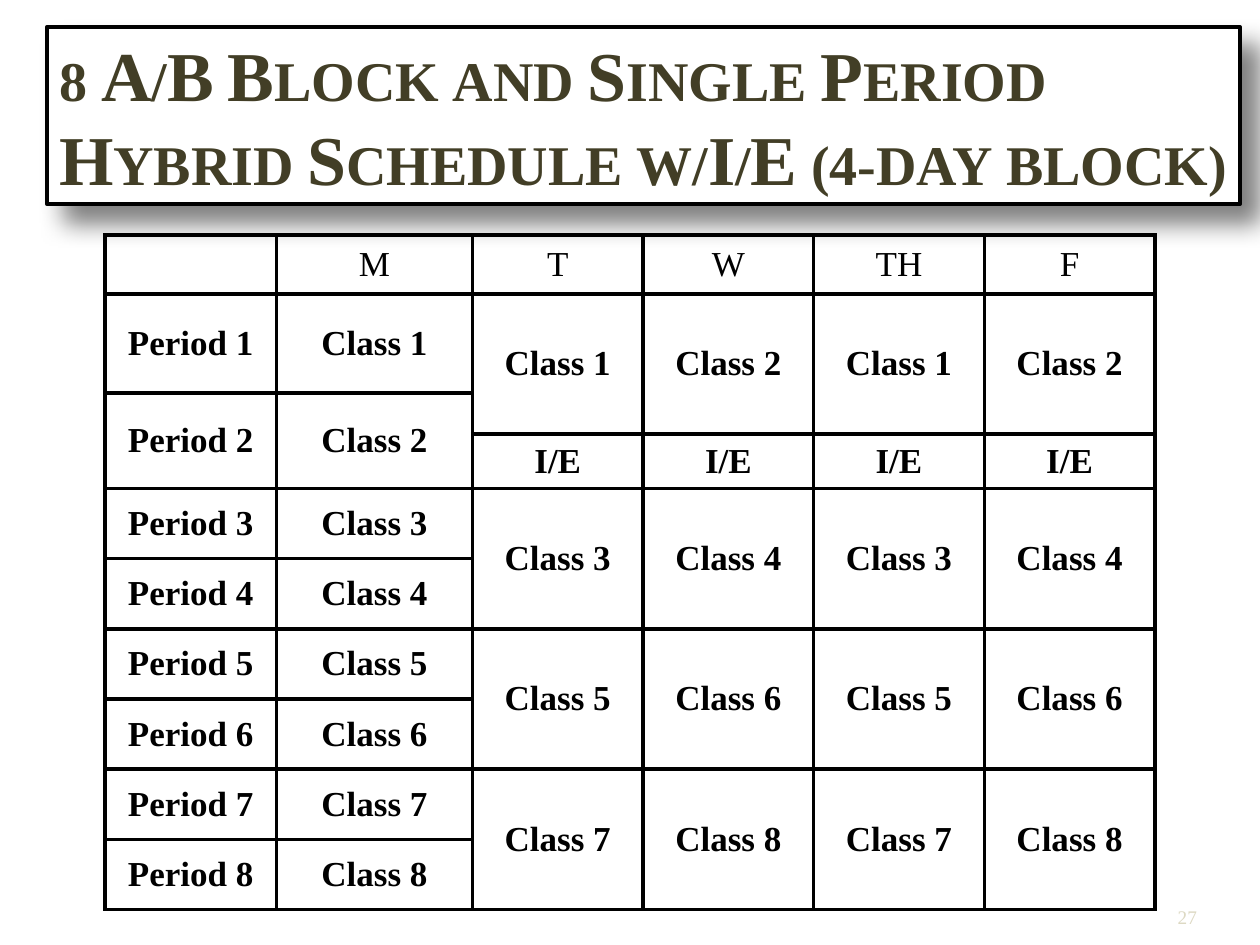
"""Build the 8 A/B block and single period hybrid schedule slide."""
from lxml.etree import SubElement
from pptx import Presentation
from pptx.dml.color import RGBColor
from pptx.enum.text import MSO_ANCHOR, PP_ALIGN
from pptx.oxml import parse_xml
from pptx.oxml.ns import nsdecls, qn
from pptx.util import Pt

COLORS = {"ink": "000000", "paper": "FFFFFF", "title": "423E26", "number": "DDD9C3"}
FONT = "Times New Roman"
DAYS = ["M", "T", "W", "TH", "F"]
PERIOD_ROWS = [1, 2, 4, 5, 6, 7, 8, 9]
BLOCK_ROWS = [1, 4, 6, 8]
COLUMN_WIDTHS = [98, 112, 97.5, 97.5, 97.5, 97.5]
ROW_HEIGHTS = [33.75, 56.5, 23.5, 29.5] + [40.1] * 6


def style(paragraph, size, color, bold=False, alignment=PP_ALIGN.CENTER):
    paragraph.alignment = alignment
    paragraph.font.name = FONT
    paragraph.font.size = Pt(size)
    paragraph.font.bold = bold
    paragraph.font.color.rgb = RGBColor.from_string(COLORS[color])


def add_borders(cell):
    properties = cell._tc.get_or_add_tcPr()
    for position, side in enumerate(["lnL", "lnR", "lnT", "lnB"]):
        border = parse_xml(
            f'<a:{side} {nsdecls("a")} w="{Pt(2.25)}"><a:solidFill>'
            f'<a:srgbClr val="{COLORS["ink"]}"/></a:solidFill></a:{side}>'
        )
        properties.insert(position, border)


presentation = Presentation()
presentation.slide_width = Pt(720)
presentation.slide_height = Pt(540)
slide = presentation.slides.add_slide(presentation.slide_layouts[5])

number_box = slide.shapes.add_textbox(Pt(635.75), Pt(514.8), Pt(48.25), Pt(18))
number_frame = number_box.text_frame
number_frame.word_wrap = True
number_frame.margin_right = 0
number_frame.vertical_anchor = MSO_ANCHOR.MIDDLE
number_frame.text = "27"
style(number_frame.paragraphs[0], 11, "number", alignment=PP_ALIGN.RIGHT)

title = slide.shapes.title
title.left, title.top, title.width, title.height = Pt(26.65), Pt(15.5), Pt(682), Pt(101)
title.fill.solid()
title.fill.fore_color.rgb = RGBColor.from_string(COLORS["paper"])
title.line.color.rgb = RGBColor.from_string(COLORS["ink"])
title.line.width = Pt(2.25)
effects = SubElement(title._element.spPr, qn("a:effectLst"))
shadow = SubElement(effects, qn("a:outerShdw"), blurRad=str(Pt(14)), dist=str(Pt(14)),
                    dir="2700000", algn="tl", rotWithShape="0")
shadow_color = SubElement(shadow, qn("a:srgbClr"), val=COLORS["ink"])
SubElement(shadow_color, qn("a:alpha"), val="50000")
title_frame = title.text_frame
title_frame.word_wrap = True
title_frame.margin_right = 0
title_frame.vertical_anchor = MSO_ANCHOR.MIDDLE
title_frame.text = "8 A/B Block and Single Period Hybrid Schedule w/I/E (4-day block)"
title_paragraph = title_frame.paragraphs[0]
style(title_paragraph, 40, "title", bold=True, alignment=PP_ALIGN.LEFT)
title_paragraph.runs[0].font._element.set("cap", "small")

table = slide.shapes.add_table(
    len(ROW_HEIGHTS), len(COLUMN_WIDTHS), Pt(60), Pt(134.25),
    Pt(sum(COLUMN_WIDTHS)), Pt(sum(ROW_HEIGHTS)),
).table
table.first_row = False
table.horz_banding = False
for column, width in zip(table.columns, COLUMN_WIDTHS):
    column.width = Pt(width)
for row, height in zip(table.rows, ROW_HEIGHTS):
    row.height = Pt(height)

for column, day in enumerate(DAYS, start=1):
    table.cell(0, column).text = day
for period, row in enumerate(PERIOD_ROWS, start=1):
    table.cell(row, 0).text = f"Period {period}"
    table.cell(row, 1).text = f"Class {period}"
for column in range(2, 6):
    table.cell(3, column).text = "I/E"
    for block, row in enumerate(BLOCK_ROWS):
        table.cell(row, column).text = f"Class {2 * block + 1 + column % 2}"
        table.cell(row, column).merge(table.cell(row + 1, column))
for column in range(2):
    table.cell(2, column).merge(table.cell(3, column))

for row in range(len(ROW_HEIGHTS)):
    for column in range(len(COLUMN_WIDTHS)):
        cell = table.cell(row, column)
        cell.fill.background()
        cell.vertical_anchor = MSO_ANCHOR.MIDDLE
        add_borders(cell)
        style(cell.text_frame.paragraphs[0], 20, "ink", bold=row > 0)

presentation.save("out.pptx")
